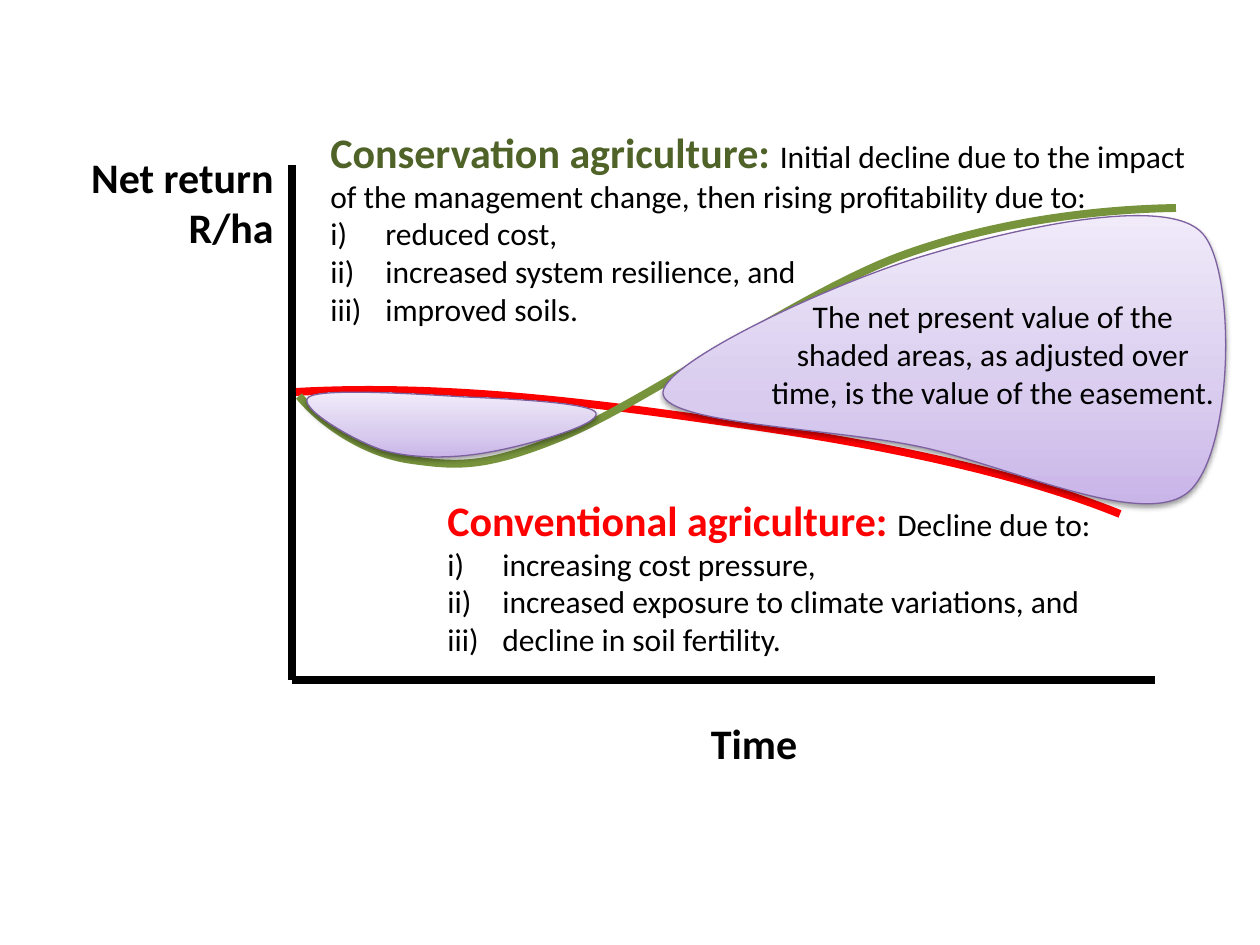
from copy import deepcopy
from dataclasses import dataclass

from lxml import etree
from pptx import Presentation
from pptx import util as u
from pptx.dml.color import RGBColor
from pptx.enum import shapes, text
from pptx.oxml.ns import qn

PX = 914400 / 126
FONT = "Calibri"
BLACK = RGBColor(0x00, 0x00, 0x00)
RED = RGBColor(0xFF, 0x00, 0x00)
GREEN = RGBColor(0x77, 0x93, 0x3C)
DARK_GREEN = RGBColor(0x4F, 0x62, 0x28)
PURPLE = RGBColor(0x7D, 0x60, 0xA0)
LILACS = (
    (0, RGBColor(0xC9, 0xB5, 0xE8)),
    (0.35, RGBColor(0xD8, 0xCB, 0xEE)),
    (1, RGBColor(0xF0, 0xEA, 0xF9)),
)
CENTER, RIGHT = text.PP_ALIGN.CENTER, text.PP_ALIGN.RIGHT
Bounds = tuple[int, int, int, int]


@dataclass(frozen=True)
class Label:
    bounds: Bounds
    lines: tuple[str, ...]
    align: text.PP_ALIGN
    size: int = 24
    bold: bool = True


@dataclass(frozen=True)
class Explanation:
    bounds: Bounds
    heading: str
    color: RGBColor
    intro: str
    reasons: tuple[str, ...]


@dataclass(frozen=True)
class Curve:
    """A start point followed by three points for each Bézier segment."""
    bounds: Bounds
    points: tuple[tuple[int, int], ...]
    color: RGBColor
    width: float = 4.5
    shaded: bool = False


TIME = Label((650, 711, 208, 63), ("Time",), CENTER)
NET_RETURN = Label((78, 145, 208, 115), ("Net return", "R/ha"), RIGHT)
EASEMENT = Label(
    (751, 291, 484, 165),
    ("The net present value of the shaded areas, as adjusted over time, "
     "is the value of the easement.",),
    CENTER, 18, False)

CONVENTIONAL = Explanation(
    (435, 488, 714, 178), "Conventional agriculture: ", RED, "Decline due to:",
    ("increasing cost pressure,",
     "increased exposure to climate variations, and",
     "decline in soil fertility."))
CONSERVATION = Explanation(
    (318, 120, 883, 217), "Conservation agriculture: ", DARK_GREEN,
    "Initial decline due to the impact of the management change, "
    "then rising profitability due to:",
    ("reduced cost,", "increased system resilience, and", "improved soils."))

CONVENTIONAL_CURVE = Curve(
    (296, 391, 824, 123),
    ((296, 392), (455, 383), (615, 406), (752, 426),
     (890, 446), (1021, 474), (1120, 514)), RED)
CONSERVATION_CURVE = Curve(
    (299, 208, 877, 256),
    ((299, 396), (323, 425), (367, 454), (412, 460),
     (456, 466), (485, 469), (566, 435),
     (646, 401), (798, 295), (898, 257),
     (1000, 219), (1108, 209), (1176, 208)), GREEN)
LOSS_AREA = Curve(
    (306, 393, 290, 64),
    ((309, 397), (295, 406), (352, 440), (382, 450),
     (412, 459), (454, 459), (490, 452),
     (525, 446), (601, 425), (596, 413),
     (592, 403), (512, 399), (464, 397),
     (416, 394), (323, 388), (309, 397)), PURPLE, 0.75, True)
GAIN_AREA = Curve(
    (663, 215, 562, 289),
    ((663, 392), (660, 423), (824, 428), (911, 445),
     (998, 461), (1137, 529), (1186, 494),
     (1234, 459), (1237, 273), (1203, 234),
     (1169, 194), (1017, 228), (927, 255),
     (837, 281), (667, 360), (663, 392)), PURPLE, 0.75, True)


def px(length: int) -> int:
    return round(length * PX)


def add_axis(page, start: tuple[int, int], end: tuple[int, int]) -> None:
    axis = page.shapes.add_connector(
        shapes.MSO_CONNECTOR.STRAIGHT, *map(px, start + end))
    axis.line.color.rgb = BLACK
    axis.line.width = u.Pt(4.5)
    etree.SubElement(axis._element.spPr, qn("a:effectLst"))


def add_frame(page, bounds: Bounds):
    frame = page.shapes.add_textbox(*map(px, bounds)).text_frame
    frame.word_wrap = True
    frame.auto_size = text.MSO_AUTO_SIZE.SHAPE_TO_FIT_TEXT
    return frame


def set_font(font, size: int, bold: bool, color: RGBColor) -> None:
    font.name = FONT
    font.size = u.Pt(size)
    font.bold = bold
    font.color.rgb = color


def add_label(page, label: Label) -> None:
    frame = add_frame(page, label.bounds)
    frame.text = "\n".join(label.lines)
    for para in frame.paragraphs:
        para.alignment = label.align
        set_font(para.font, label.size, label.bold, BLACK)


def add_explanation(page, item: Explanation) -> None:
    frame = add_frame(page, item.bounds)
    para = frame.paragraphs[0]
    for words, size, bold, color in (
            (item.heading, 24, True, item.color),
            (item.intro, 18, False, BLACK)):
        span = para.add_run()
        span.text = words
        set_font(span.font, size, bold, color)
    for reason in item.reasons:
        para = frame.add_paragraph()
        para.text = reason
        properties = para._p.get_or_add_pPr()
        properties.set("marL", str(px(55)))
        properties.set("indent", str(-px(55)))
        etree.SubElement(properties, qn("a:buAutoNum"), type="romanLcParenR")
        set_font(para.font, 18, False, BLACK)


def bend(shape, curve: Curve) -> None:
    """Turn the straight segments of a freeform into Bézier segments."""
    left, top, width, height = curve.bounds
    shape.left, shape.top, shape.width, shape.height = map(px, curve.bounds)
    path = shape._element.spPr.find(".//" + qn("a:path"))
    path.set("w", str(width))
    path.set("h", str(height))
    for child in list(path):
        path.remove(child)
    groups = [curve.points[:1]] + [
        curve.points[i:i + 3] for i in range(1, len(curve.points), 3)]
    for group in groups:
        tag = "a:moveTo" if len(group) == 1 else "a:cubicBezTo"
        segment = etree.SubElement(path, qn(tag))
        for x, y in group:
            etree.SubElement(segment, qn("a:pt"), x=str(x - left), y=str(y - top))
    if curve.shaded:
        etree.SubElement(path, qn("a:close"))


def shade(shape) -> None:
    """Give a shape the lilac gradient and a soft shadow below it."""
    shape.fill.gradient()
    shape.fill.gradient_angle = 90
    stops = shape._element.spPr.find(".//" + qn("a:gsLst"))
    stops.append(deepcopy(stops[-1]))
    for stop, (position, color) in zip(shape.fill.gradient_stops, LILACS):
        stop.position = position
        stop.color.rgb = color
    effects = shape._element.spPr.find(qn("a:effectLst"))
    shadow = etree.SubElement(
        effects, qn("a:outerShdw"), blurRad="40000", dist="20000",
        dir="5400000", rotWithShape="0")
    color = etree.SubElement(shadow, qn("a:srgbClr"), val=str(BLACK))
    etree.SubElement(color, qn("a:alpha"), val="38000")


def add_curve(page, curve: Curve) -> None:
    anchors = curve.points[::3]
    builder = page.shapes.build_freeform(*anchors[0], scale=PX)
    builder.add_line_segments(anchors[1:], close=curve.shaded)
    shape = builder.convert_to_shape()
    bend(shape, curve)
    shape.line.color.rgb = curve.color
    shape.line.width = u.Pt(curve.width)
    shape.shadow.inherit = False
    if curve.shaded:
        shade(shape)
    else:
        shape.fill.background()


def main() -> None:
    deck = Presentation()
    deck.slide_width, deck.slide_height = px(1260), px(945)
    page = deck.slides.add_slide(deck.slide_layouts[6])
    add_axis(page, (292, 165), (292, 680))
    add_axis(page, (1155, 680), (292, 680))
    add_label(page, TIME)
    add_label(page, NET_RETURN)
    add_curve(page, CONVENTIONAL_CURVE)
    add_explanation(page, CONVENTIONAL)
    add_curve(page, CONSERVATION_CURVE)
    add_explanation(page, CONSERVATION)
    add_curve(page, LOSS_AREA)
    add_curve(page, GAIN_AREA)
    add_label(page, EASEMENT)
    deck.save("out.pptx")


if __name__ == "__main__":
    main()
